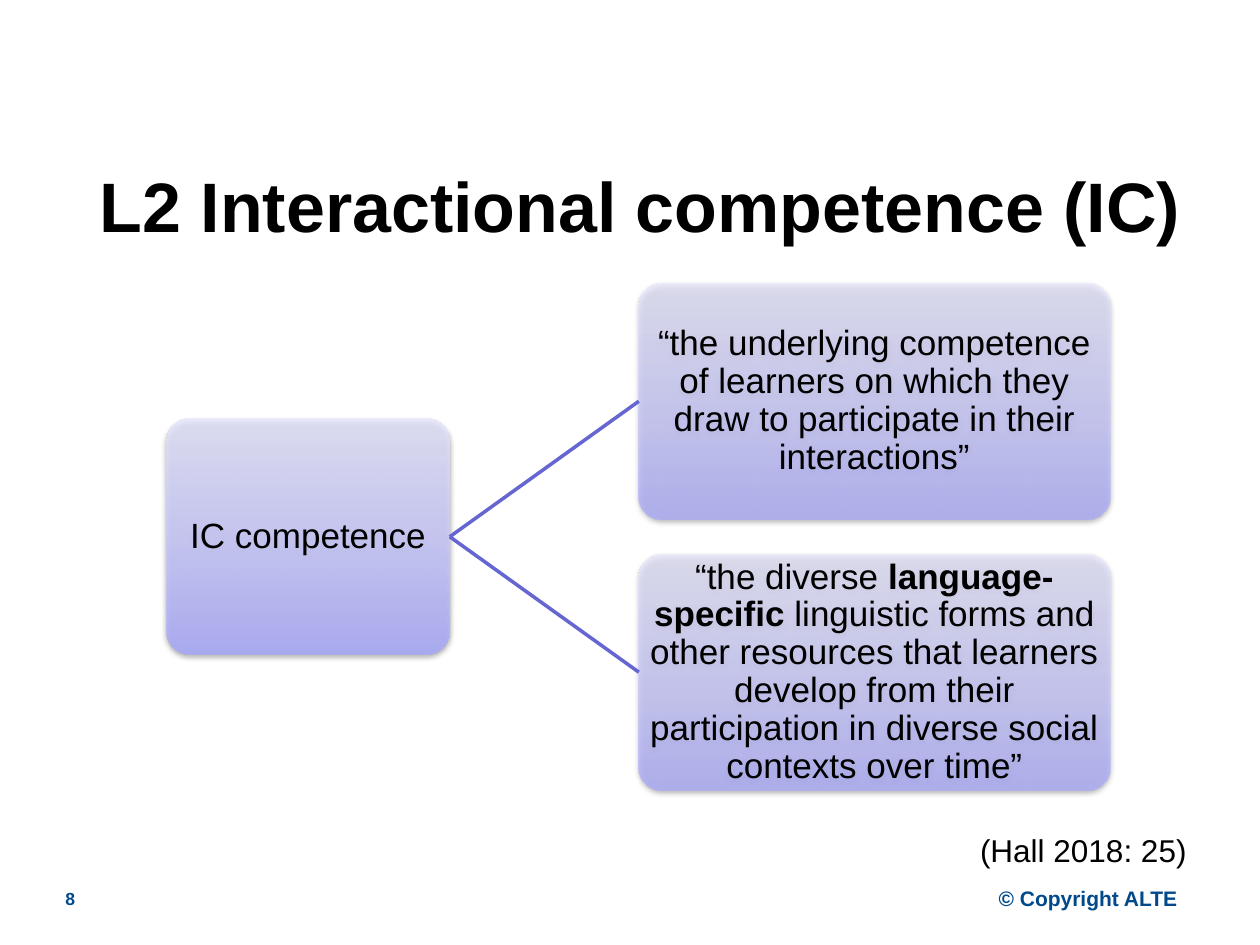
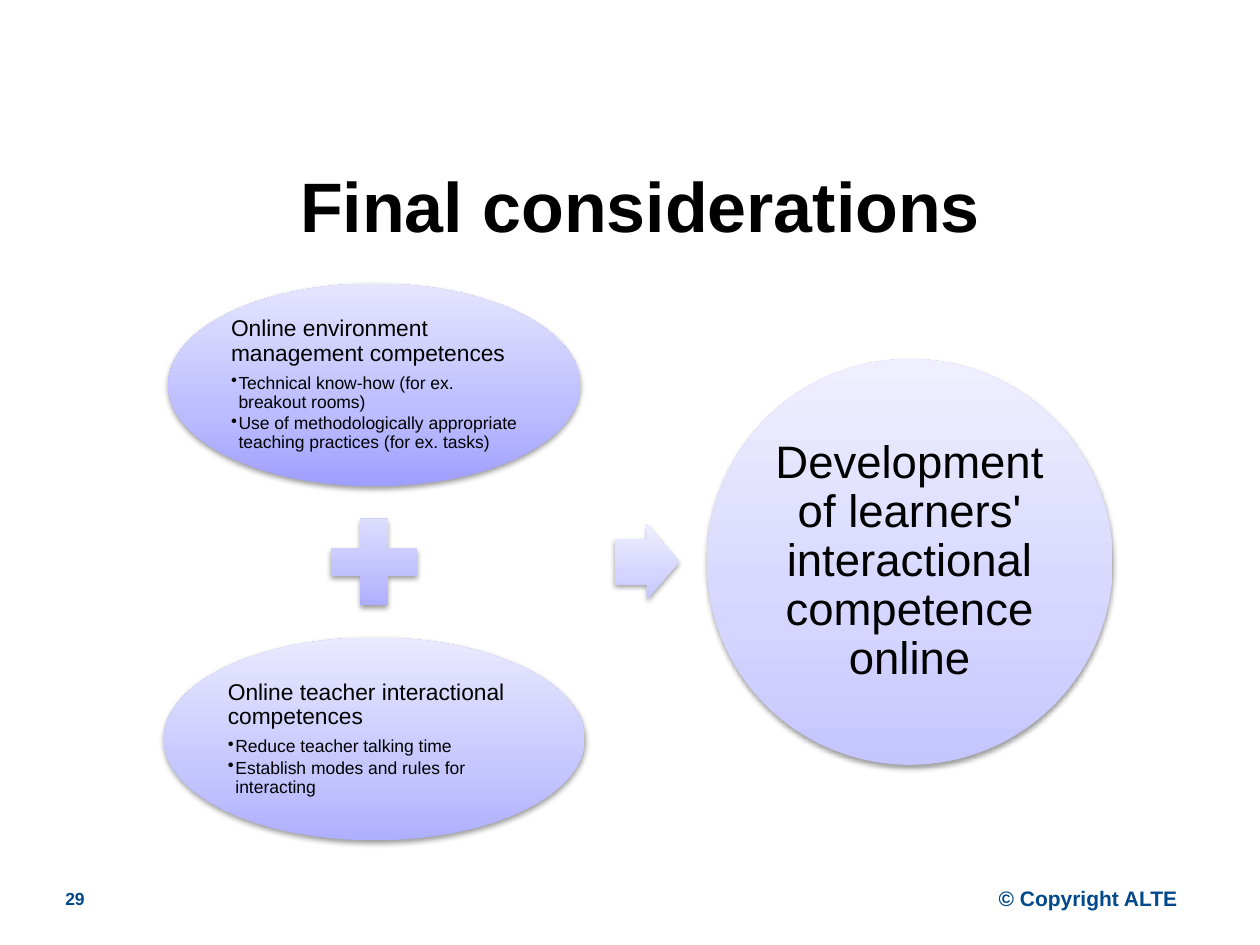
from lxml import etree
from pptx import Presentation
from pptx.dml.color import RGBColor
from pptx.enum.shapes import MSO_CONNECTOR, MSO_SHAPE
from pptx.enum.text import MSO_ANCHOR, MSO_AUTO_SIZE, PP_ALIGN
from pptx.oxml.ns import qn
from pptx.util import Inches, Pt

ROUND, OVAL = MSO_SHAPE.ROUNDED_RECTANGLE, MSO_SHAPE.OVAL
PLUS, ARROW = MSO_SHAPE.MATH_PLUS, MSO_SHAPE.RIGHT_ARROW
STRAIGHT = MSO_CONNECTOR.STRAIGHT
MIDDLE, NO_FIT = MSO_ANCHOR.MIDDLE, MSO_AUTO_SIZE.NONE
LEFT, CENTER = PP_ALIGN.LEFT, PP_ALIGN.CENTER

FONT = "Arial"
BLACK, NAVY, VIOLET = "000000", "00498B", "6666D2"
LILAC = ("A7A7FF", "C1C1FF", "E7E7FF")
DEEP = ("9F9FFF", "BBBBFF", "E5E5FF")
MID = ("A3A3FF", "BEBEFF", "E6E6FF")
SOFT = ("AFAFFF", "C6C6FF", "E9E9FF")
PALE = ("C5C5FF", "D5D5FF", "EFEFFF")
STOPS = (0, 35, 100)


def paint(color, code):
    """Set a colour object from a hex string."""
    color.rgb = RGBColor.from_string(code)


def style(run, size, code=BLACK, bold=False):
    """Format one run."""
    run.font.name, run.font.size, run.font.bold = FONT, Pt(size), bold
    paint(run.font.color, code)


def add_hex(parent, code, alpha):
    """Add an XML colour with an opacity in percent."""
    node = etree.SubElement(parent, qn("a:srgbClr"), val=code)
    etree.SubElement(node, qn("a:alpha"), val=str(alpha * 1000))


def add_form(slide, kind, box, tones, alpha=100):
    """Add a borderless shape with an upward gradient and a soft shadow."""
    form = slide.shapes.add_shape(kind, *map(Inches, box))
    form.line.fill.background()
    form.fill.gradient()
    form.fill.gradient_angle = 90
    props = form._element.spPr
    ramp = props.find(qn("a:gradFill")).find(qn("a:gsLst"))
    for stop in list(ramp):
        ramp.remove(stop)
    for spot, tone in zip(STOPS, tones):
        add_hex(etree.SubElement(ramp, qn("a:gs"), pos=str(spot * 1000)), tone, alpha)
    form.shadow.inherit = False
    glow = etree.SubElement(props.find(qn("a:effectLst")), qn("a:outerShdw"),
                            blurRad="40000", dist="20000", dir="5400000", rotWithShape="0")
    add_hex(glow, BLACK, 38)
    return form


def write(form, lines, inset, align=CENTER):
    """Fill a shape with (text, size, bullet) lines; asterisks enclose bold words."""
    frame = form.text_frame
    frame.word_wrap, frame.vertical_anchor = True, MIDDLE
    frame.margin_left = frame.margin_right = Inches(inset)
    frame.margin_top = frame.margin_bottom = Inches(inset)
    for i, (text, size, dot) in enumerate(lines):
        para = frame.add_paragraph() if i else frame.paragraphs[0]
        para.alignment, para.line_spacing = align, 0.9
        para.space_after = Pt(size * (0.15 if dot else 0.35))
        if dot:
            props = para._p.get_or_add_pPr()
            props.set("marL", str(Inches(0.06)))
            props.set("indent", str(Inches(-0.06)))
            etree.SubElement(props, qn("a:buChar"), char="•")
        for j, part in enumerate(text.split("*")):
            run = para.add_run()
            run.text = part
            style(run, size, bold=j % 2 == 1)


def add_label(slide, box, text, size, code=BLACK, bold=False, align=LEFT):
    """Add a one-line text box."""
    frame = slide.shapes.add_textbox(*map(Inches, box)).text_frame
    frame.word_wrap = False
    para = frame.paragraphs[0]
    para.text, para.alignment = text, align
    style(para.runs[0], size, code, bold)


def add_page(deck, title, number):
    """Add a slide with its title and footer."""
    slide = deck.slides.add_slide(deck.slide_layouts[5])
    head = slide.shapes.title
    head.left, head.top, head.width, head.height = map(Inches, (0.58, 1.08, 9, 1.08))
    frame = head.text_frame
    frame.text = title
    frame.auto_size, frame.vertical_anchor = NO_FIT, MIDDLE
    frame.paragraphs[0].alignment = CENTER
    style(frame.paragraphs[0].runs[0], 40, bold=True)
    add_label(slide, (0.42, 7, 0.67, 0.27), number, 10, NAVY, True)
    add_label(slide, (7.79, 6.98, 1.69, 0.3), "© Copyright ALTE", 12, NAVY, True, CENTER)
    return slide


def add_card(slide, box, text, alpha):
    """Add a rounded card with centred text."""
    card = add_form(slide, ROUND, box, LILAC, alpha)
    card.adjustments[0] = 0.1
    write(card, [(text, 20, False)], 0.01)
    return card


def add_tree(slide, box, root, leaves):
    """Draw a root card joined to a column of leaf cards."""
    left, top, width, height = box
    tall, broad, wide = 1.87, 2.25, 3.74
    step = (height - tall) / (len(leaves) - 1)
    stem = add_card(slide, (left, top + (height - tall) / 2, broad, tall), root, 80)
    for i, text in enumerate(leaves):
        leaf = add_card(slide, (left + width - wide, top + i * step, wide, tall), text, 70)
        link = slide.shapes.add_connector(STRAIGHT, 0, 0, 0, 0)
        link.begin_connect(stem, 3)
        link.end_connect(leaf, 1)
        link.line.width = Pt(2)
        paint(link.line.color, VIOLET)
        etree.SubElement(link._element.spPr, qn("a:effectLst"))


def add_sum(slide, box, terms, result):
    """Draw two ovals joined by a plus, and an arrow to the result circle."""
    left, top, width, height = box
    mid, axis = top + height / 2, left + 1.67
    tall, plus, ball = 1.61, 0.93, 3.22
    for i, (wide, tones, head, points) in enumerate(terms):
        spot = (axis - wide / 2, top + i * (height - tall), wide, tall)
        lines = [(head, 13, False)] + [(point, 10, True) for point in points]
        write(add_form(slide, OVAL, spot, tones), lines, 0.02, LEFT)
    add_form(slide, PLUS, (axis - plus / 2, mid - plus / 2, plus, plus), MID)
    arrow = add_form(slide, ARROW, (left + 3.58, mid - 0.3, 0.51, 0.6), PALE)
    arrow.adjustments[0] = 0.6
    goal = add_form(slide, OVAL, (left + width - ball, mid - ball / 2, ball, ball), PALE)
    write(goal, [(result, 26, False)], 0.04)


def main():
    """Build both slides and save the deck."""
    deck = Presentation()
    deck.slide_width, deck.slide_height = Inches(10), Inches(7.5)
    slide = add_page(deck, "L2 Interactional competence (IC)", "8")
    add_tree(slide, (1.32, 2.25, 7.49, 4.02), "IC competence", (
        "“the underlying competence of learners on which they draw to participate "
        "in their interactions”",
        "“the diverse *language-specific* linguistic forms and other resources that "
        "learners develop from their participation in diverse social contexts over time”"))
    add_label(slide, (7.68, 6.55, 1.86, 0.4), "(Hall 2018: 25)", 18)

    slide = add_page(deck, "Final considerations", "29")
    add_sum(slide, (1.3, 2.25, 7.53, 4.42), (
        (3.27, DEEP, "Online environment management competences",
         ("Technical know-how (for ex. breakout rooms)",
          "Use of methodologically appropriate teaching practices (for ex. tasks)")),
        (3.34, SOFT, "Online teacher interactional competences",
         ("Reduce teacher talking time", "Establish modes and rules for interacting"))),
        "Development of learners' interactional competence online")
    deck.save("out.pptx")


if __name__ == "__main__":
    main()
